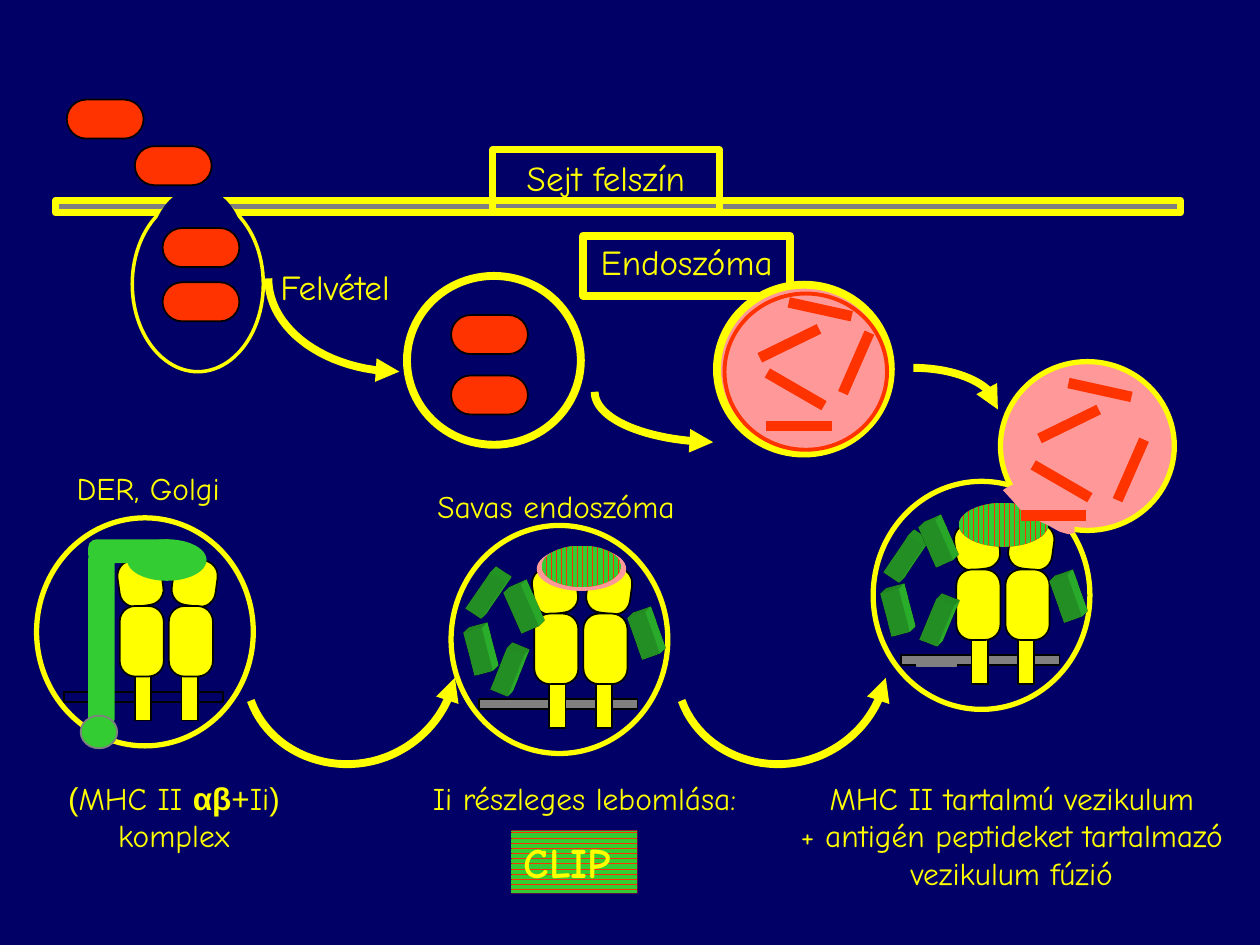
from lxml import etree
from pptx import Presentation
from pptx import util as u
from pptx.dml.color import RGBColor
from pptx.enum import dml, shapes, text
from pptx.oxml import parse_xml
from pptx.oxml.ns import nsdecls, qn

COLS, ROWS = 10, 7.5
UNIT = u.Inches(1)  # one grid cell

NAVY = RGBColor(0x00, 0x00, 0x66)
YELLOW = RGBColor(0xFF, 0xFF, 0x00)
RED = RGBColor(0xFF, 0x33, 0x00)
PINK = RGBColor(0xFF, 0x99, 0x99)
GREEN = RGBColor(0x33, 0xCC, 0x33)
GRAY = RGBColor(0x80, 0x80, 0x80)
BLACK = RGBColor(0x00, 0x02, 0x02)

RECT = shapes.MSO_SHAPE.RECTANGLE
ROUND = shapes.MSO_SHAPE.ROUNDED_RECTANGLE
OVAL = shapes.MSO_SHAPE.OVAL
STRIPES = dml.MSO_PATTERN.DARK_VERTICAL
BANDS = dml.MSO_PATTERN.DARK_HORIZONTAL
LEFT, CENTER = text.PP_ALIGN.LEFT, text.PP_ALIGN.CENTER
COMIC, ARIAL = "Comic Neue", "Arial"

TURNS = (340.7, 345.5, 33.9, 336.3, 21.9)
STROKES = ((0.5, 0.11), (0.47, -0.23), (0.45, 0.26), (0.52, 0), (0.21, -0.48))


def grid(*cells):
    return [u.Emu(round(cell * UNIT)) for cell in cells]


def paint(shape, fill=None, line=None, width=1, weave=None):
    """Set fill and line; weave is a pattern of the fill over red."""
    shape.shadow.inherit = False
    if weave:
        shape.fill.patterned()
        shape.fill.pattern = weave
        shape.fill.fore_color.rgb = fill
        shape.fill.back_color.rgb = RED
    elif fill is not None:
        shape.fill.solid()
        shape.fill.fore_color.rgb = fill
    else:
        shape.fill.background()
    if line is not None:
        shape.line.color.rgb = line
        shape.line.width = u.Pt(width)
    else:
        shape.line.fill.background()


def draw(slide, kind, x, y, w, h, turn=0, bend=None, **look):
    shape = slide.shapes.add_shape(kind, *grid(x, y, w, h))
    shape.rotation = turn
    if bend is not None:
        shape.adjustments[0] = bend
    paint(shape, **look)
    return shape


def write(shape, lines, size=18, align=CENTER, wrap=True, bold=False, pad=0.1):
    """Fill a shape with lines; a line is a string or (words, font, bold) runs."""
    frame = shape.text_frame
    frame.word_wrap = wrap
    frame.auto_size = text.MSO_AUTO_SIZE.SHAPE_TO_FIT_TEXT
    frame.vertical_anchor = text.MSO_ANCHOR.TOP
    frame.margin_left = frame.margin_right = grid(pad)[0]
    frame.margin_top = frame.margin_bottom = grid(pad / 2)[0]
    for i, line in enumerate(lines):
        para = frame.paragraphs[0] if i == 0 else frame.add_paragraph()
        para.alignment = align
        runs = [(line, COMIC, bold)] if isinstance(line, str) else line
        for words, face, heavy in runs:
            run = para.add_run()
            run.text = words
            run.font.name = face
            run.font.size = u.Pt(size)
            run.font.bold = heavy
            run.font.color.rgb = YELLOW


def label(slide, x, y, w, h, lines, **form):
    write(slide.shapes.add_textbox(*grid(x, y, w, h)), lines, **form)


def trace(slide, points, close=False, **look):
    pen = slide.shapes.build_freeform(*grid(*points[0]))
    pen.add_line_segments([grid(*point) for point in points[1:]], close=close)
    shape = pen.convert_to_shape()
    paint(shape, **look)
    return shape


def arrow(slide, *knots, end="headEnd"):
    """Draw a chain of cubic curves with an arrowhead at its start or end."""
    points = [knots[0]]
    for k in range(0, len(knots) - 1, 3):
        a, b, c, d = knots[k:k + 4]
        for step in range(1, 25):
            t = step / 24
            s = 1 - t
            points.append([s**3 * p + 3 * s * s * t * q + 3 * s * t * t * r + t**3 * v
                           for p, q, r, v in zip(a, b, c, d)])
    shape = trace(slide, points, line=YELLOW, width=4.5)
    line = shape.line._get_or_add_ln()
    etree.SubElement(line, qn("a:round"))
    etree.SubElement(line, qn("a:" + end), type="triangle")


def pills(slide, *spots):
    for x, y in spots:
        draw(slide, ROUND, x, y, 0.61, 0.31, bend=0.5, fill=RED, line=RGBColor(0, 0, 0))


def peptides(slide, *starts):
    for (x, y), (dx, dy) in zip(starts, STROKES):
        bar = slide.shapes.add_connector(shapes.MSO_CONNECTOR.STRAIGHT,
                                         *grid(x, y, x + dx, y + dy))
        bar.line.color.rgb = RED
        bar.line.width = u.Pt(6)
        etree.SubElement(bar._element.spPr, qn("a:effectLst"))


def shards(slide, x, y, *spots):
    """Draw the extruded green pieces inside the cell at x, y."""
    for (dx, dy), turn in zip(spots, TURNS):
        shard = draw(slide, RECT, x + dx, y + dy, 0.15, 0.35, turn=turn, fill=GREEN)
        tree = shard._element.spPr
        tree.append(parse_xml(
            f'<a:scene3d {nsdecls("a")}><a:camera prst="legacyObliqueTopRight"/>'
            '<a:lightRig rig="legacyFlat3" dir="b"/></a:scene3d>'))
        tree.append(parse_xml(
            f'<a:sp3d {nsdecls("a")} extrusionH="117000" prstMaterial="legacyMatte">'
            f'<a:extrusionClr><a:srgbClr val="{GREEN}"/></a:extrusionClr></a:sp3d>'))


def cell(slide, x, y, floor=GRAY):
    """Draw a vesicle with its membrane and the two-chain MHC complex."""
    draw(slide, OVAL, x, y, 1.72, 1.81, line=YELLOW, width=3)
    draw(slide, RECT, x + 0.22, y + 1.38, 1.26, 0.08, fill=floor, line=BLACK)
    part = {"fill": YELLOW, "line": BLACK}
    for stem, chain, top, turn in ((1.15, 1.05, 1.08, 7.9), (0.78, 0.66, 0.65, 352.1)):
        draw(slide, ROUND, x + top, y + 0.33, 0.35, 0.37, turn=turn, bend=0.35, **part)
        draw(slide, RECT, x + stem, y + 1.05, 0.13, 0.56, **part)
        draw(slide, ROUND, x + chain, y + 0.7, 0.35, 0.56, bend=0.35, **part)


def uptake(slide):
    box = draw(slide, RECT, 4.63, 1.87, 1.64, 0.48, line=YELLOW, width=4.5)
    write(box, ["Endoszóma"], size=20, wrap=False, pad=0.08)
    arrow(slide, (5.66, 3.51), (5.14, 3.5), (4.72, 3.33), (4.72, 3.11))
    draw(slide, OVAL, 5.69, 2.26, 1.38, 1.34, fill=PINK, line=YELLOW, width=4.5)
    draw(slide, OVAL, 3.23, 2.19, 1.38, 1.34, line=YELLOW, width=4.5)
    arrow(slide, (3.17, 2.95), (2.6, 2.95), (2.13, 2.62), (2.13, 2.21))
    draw(slide, RECT, 0.44, 1.59, 8.93, 0.1, fill=GRAY, line=YELLOW, width=4)
    box = draw(slide, RECT, 3.91, 1.19, 1.8, 0.49, line=YELLOW, width=4)
    write(box, ["Sejt felszín"], size=20, wrap=False)
    label(slide, 2.04, 2.06, 1.24, 0.43, ["Felvétel"], size=20, wrap=False)
    draw(slide, OVAL, 1.05, 1.56, 1.04, 1.39, fill=NAVY, line=YELLOW, width=2)
    draw(slide, OVAL, 1.2, 1.49, 0.74, 0.97, fill=NAVY)
    pills(slide, (3.58, 2.5), (3.58, 2.98), (1.07, 1.16), (0.53, 0.79),
          (1.29, 2.24), (1.29, 1.81))
    draw(slide, OVAL, 5.75, 2.33, 1.29, 1.24, fill=PINK, line=RED, width=2.25)
    peptides(slide, (6.26, 2.4), (6.03, 2.84), (6.09, 2.96), (6.08, 3.38), (6.69, 3.12))


def fusion(slide):
    x, y = 6.93, 3.82
    cell(slide, x, y)
    draw(slide, OVAL, 7.61, 3.99, 0.71, 0.35, fill=GREEN, weave=STRIPES)
    shards(slide, x, y, (1.45, 0.76), (0.1, 0.87), (0.17, 0.44), (0.42, 0.32), (0.43, 0.95))
    draw(slide, RECT, 7.28, 5.21, 0.31, 0.08, fill=GRAY, line=GRAY)
    label(slide, 6.07, 6.13, 3.92, 1, ["MHC II tartalmú vezikulum",
          "+ antigén peptideket tartalmazó", "vezikulum fúzió"], wrap=False)
    arrow(slide, (7.25, 2.92), (7.62, 2.92), (7.92, 3.07), (7.92, 3.25), end="tailEnd")
    draw(slide, OVAL, 7.94, 2.87, 1.38, 1.34, fill=PINK, line=YELLOW, width=3)
    trace(slide, [(8.05, 3.84), (8.1, 3.86), (8.13, 3.92), (8.28, 4.03), (8.38, 4.05),
                  (8.5, 4.09), (8.53, 4.19), (8.53, 4.23), (8.48, 4.24), (8.41, 4.22),
                  (8.32, 4.17), (8.13, 4.08), (8.06, 4), (7.96, 3.89), (7.99, 3.87)],
          close=True, fill=PINK)
    peptides(slide, (8.48, 3.04), (8.25, 3.48), (8.2, 3.69), (8.1, 4.09), (8.87, 3.97))


def golgi(slide):
    cell(slide, 0.29, 4.11, floor=None)
    label(slide, 0.17, 6.13, 2.42, 0.7, [[
        ("(", ARIAL, False), ("MHC II ", COMIC, False), ("αβ", ARIAL, True),
        ("+", ARIAL, False), ("Ii", COMIC, False), (") ", ARIAL, False),
        ("komplex", COMIC, False)]])
    draw(slide, ROUND, 0.7, 4.36, 0.21, 1.42, bend=0.35, fill=GREEN)
    draw(slide, ROUND, 0.7, 4.28, 0.7, 0.19, bend=0.35, fill=GREEN)
    draw(slide, OVAL, 0.64, 5.68, 0.29, 0.26, fill=GREEN, line=GRAY)
    draw(slide, OVAL, 1.01, 4.28, 0.63, 0.33, fill=GREEN)
    label(slide, 0.51, 3.67, 1.58, 0.4, ["DER, Golgi"], align=LEFT)


def acid(slide):
    x, y = 3.58, 4.17
    label(slide, 3.11, 6.13, 3.06, 0.4, ["Ii részleges lebomlása:"])
    cell(slide, x, y)
    draw(slide, OVAL, 4.26, 4.34, 0.71, 0.35, fill=PINK)
    draw(slide, OVAL, 4.3, 4.33, 0.63, 0.33, fill=GREEN, weave=STRIPES)
    shards(slide, x, y, (1.45, 0.7), (0.14, 0.83), (0.2, 0.38), (0.48, 0.49), (0.37, 0.99))
    for dx in (0, 3.42):
        arrow(slide, *[(px + dx, py) for px, py in (
            (3.61, 5.38), (3.55, 5.66), (3.35, 5.9), (3.06, 6.01),
            (2.63, 6.17), (2.14, 5.97), (1.99, 5.56))])
    box = draw(slide, RECT, 4.06, 6.59, 1, 0.5, fill=GREEN, weave=BANDS)
    write(box, ["CLIP"], size=24, align=LEFT, bold=True)
    label(slide, 3.35, 3.82, 2.21, 0.4, ["Savas endoszóma "])


def main():
    deck = Presentation()
    deck.slide_width, deck.slide_height = grid(COLS, ROWS)
    slide = deck.slides.add_slide(deck.slide_layouts[6])
    slide.background.fill.solid()
    slide.background.fill.fore_color.rgb = NAVY
    for scene in (uptake, fusion, golgi, acid):
        scene(slide)
    deck.save("out.pptx")


if __name__ == "__main__":
    main()
